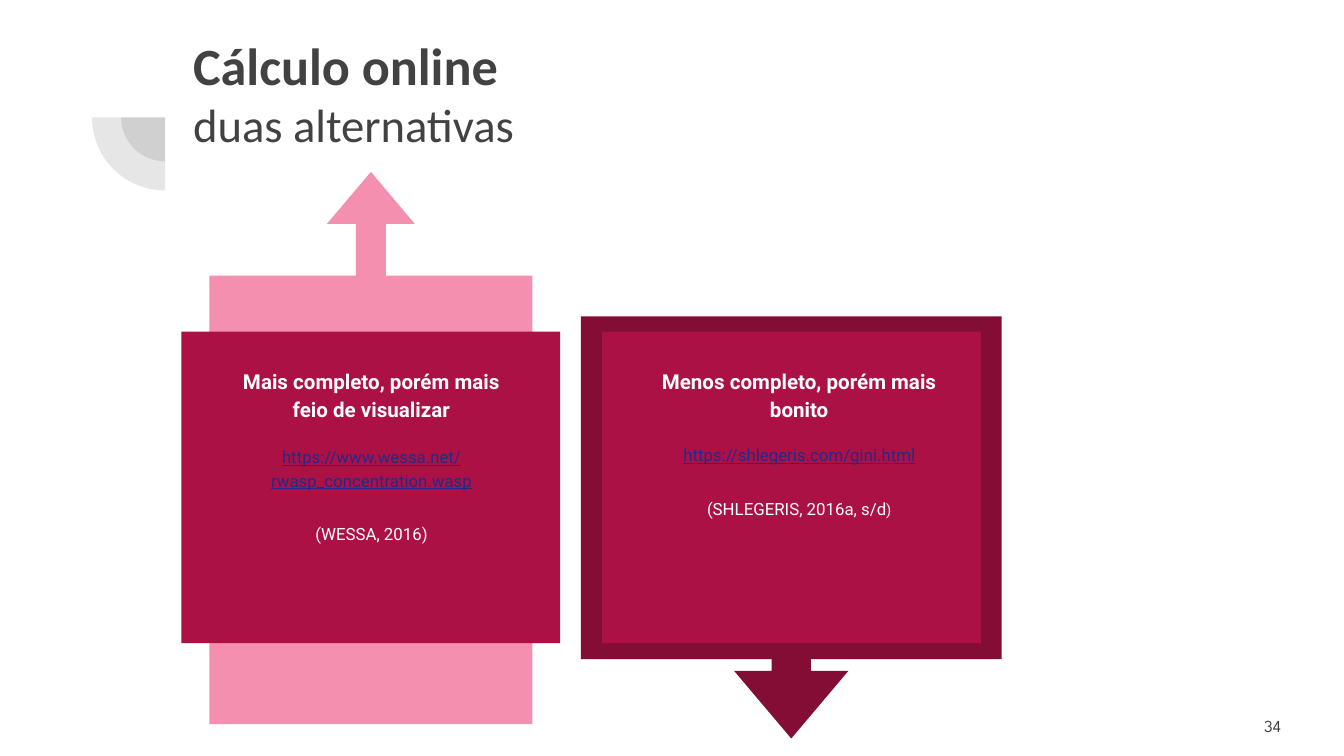
from lxml import etree
from pptx import Presentation
from pptx.dml.color import RGBColor
from pptx.enum.shapes import MSO_SHAPE
from pptx.enum.text import MSO_ANCHOR, PP_ALIGN
from pptx.oxml.ns import qn
from pptx.util import Cm, Pt

PIE, RECTANGLE = MSO_SHAPE.PIE, MSO_SHAPE.RECTANGLE
UP_CALLOUT, DOWN_CALLOUT = MSO_SHAPE.UP_ARROW_CALLOUT, MSO_SHAPE.DOWN_ARROW_CALLOUT
LEFT, CENTER, RIGHT = PP_ALIGN.LEFT, PP_ALIGN.CENTER, PP_ALIGN.RIGHT
TOP, MIDDLE = MSO_ANCHOR.TOP, MSO_ANCHOR.MIDDLE

GREY, WHITE, LINK = "424242", "FFFFFF", "27278B"
PINK, CRIMSON, WINE = "F48FB0", "AC1145", "840D35"
CALLOUT_SHAPE = (0.093, 0.136, 0.161, 0.812)
CARD_TOP, CARD_WIDTH, CARD_HEIGHT = 6.27, 7.16, 5.89
TEXT_TOP, TEXT_HEIGHT = 6.65, 4.9


def color(hex_code):
    return RGBColor.from_string(hex_code)


class Deck:
    title_font, body_font, number_font = "Calibri", "Roboto", "League Spartan"

    def __init__(self, slide):
        self.slide = slide

    def shape(self, kind, box, fill, adjustments=(), alpha=None):
        item = self.slide.shapes.add_shape(kind, *map(Cm, box))
        item.shadow.inherit = False
        item.line.fill.background()
        item.fill.solid()
        item.fill.fore_color.rgb = color(fill)
        for i, value in enumerate(adjustments):
            item.adjustments[i] = value
        if alpha is not None:
            tint = item.fill._xPr.find(qn("a:solidFill"))[0]
            etree.SubElement(tint, qn("a:alpha"), val=str(alpha * 1000))

    def quarter(self, center_x, center_y, radius):
        box = (center_x - radius, center_y - radius, 2 * radius, 2 * radius)
        # Adjustments run from 90 to 180 degrees
        self.shape(PIE, box, GREY, (54, 108), alpha=13)

    def text(self, box, anchor=TOP):
        frame = self.slide.shapes.add_textbox(*map(Cm, box)).text_frame
        frame.word_wrap = True
        frame.vertical_anchor = anchor
        frame.margin_left = frame.margin_right = Cm(0.25)
        frame.margin_top = frame.margin_bottom = Cm(0.25)
        return frame

    def line(self, frame, words, font, size, ink, bold=False, underline=False,
             align=LEFT, spacing=1, before=0):
        paragraph = frame.paragraphs[0]
        if paragraph.runs:
            paragraph = frame.add_paragraph()
        paragraph.add_run().text = words
        paragraph.alignment = align
        paragraph.line_spacing = spacing
        paragraph.space_before = Pt(before)
        style = paragraph.font
        style.name, style.size = font, Pt(size)
        style.bold, style.underline = bold, underline
        style.color.rgb = color(ink)
        return paragraph

    def option(self, card_left, text_left, text_width, heading, address, source, gap):
        self.shape(RECTANGLE, (card_left, CARD_TOP, CARD_WIDTH, CARD_HEIGHT), CRIMSON)
        frame = self.text((text_left, TEXT_TOP, text_width, TEXT_HEIGHT))
        common = {"font": self.body_font, "align": CENTER, "spacing": 1.15}
        self.line(frame, heading, size=11, ink=WHITE, bold=True, **common)
        self.line(frame, address, size=9, ink=LINK, underline=True, before=gap, **common)
        return self.line(frame, source, size=9, ink=WHITE, before=16, **common)


def main():
    presentation = Presentation()
    presentation.slide_width, presentation.slide_height = Cm(25.4), Cm(14.29)
    deck = Deck(presentation.slides.add_slide(presentation.slide_layouts[6]))

    # Corner ornament
    for radius in (0.83, 1.38):
        deck.quarter(3.12, 2.22, radius)

    # Title and slide number
    title = deck.text((3.4, 0.38, 19.53, 1.63))
    deck.line(title, "Cálculo online", deck.title_font, 28, GREY, bold=True)
    deck.line(title, "duas alternativas", deck.title_font, 25, GREY)
    number = deck.text((22.45, 13.18, 2.01, 1.07), MIDDLE)
    deck.line(number, "34", deck.number_font, 9, GREY, align=RIGHT)

    # More complete option, pointing up
    deck.shape(UP_CALLOUT, (3.96, 3.25, 6.1, 10.44), PINK, CALLOUT_SHAPE)
    deck.option(3.43, 4.01, 6.02, "Mais completo, porém mais feio de visualizar",
                "https://www.wessa.net/rwasp_concentration.wasp", "(WESSA, 2016)", 12)

    # Better-looking option, pointing down
    deck.shape(DOWN_CALLOUT, (10.98, 5.98, 7.95, 7.98), WINE, CALLOUT_SHAPE)
    source = deck.option(11.38, 11.89, 6.43, "Menos completo, porém mais bonito",
                         "https://shlegeris.com/gini.html", "(SHLEGERIS, 2016a, s/d", 11)
    bracket = source.add_run()
    bracket.text = ")"
    bracket.font.size = Pt(8)

    presentation.save("out.pptx")


if __name__ == "__main__":
    main()
